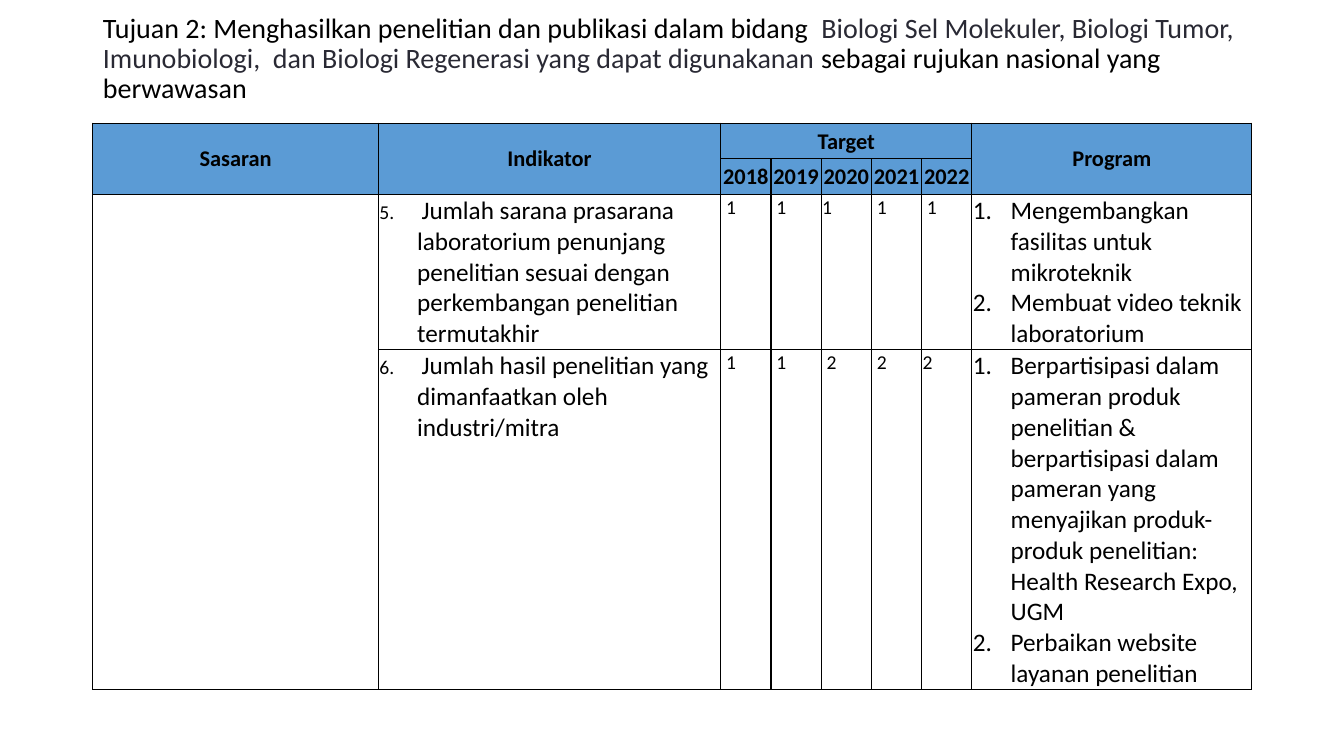
from lxml.etree import SubElement as Sub
from pptx import Presentation
from pptx.dml.color import RGBColor as Rgb
from pptx.enum.text import MSO_ANCHOR as Anchor, MSO_AUTO_SIZE as Fit, PP_ALIGN as Align
from pptx.oxml.ns import qn
from pptx.util import Pt

HUES = {"ink": "000000", "dark": "292934", "head": "5B9BD5"}
FONT = "Calibri"
TITLE = [
    ("Tujuan 2: Menghasilkan penelitian dan publikasi dalam bidang  ", "ink"),
    ("Biologi Sel Molekuler, Biologi Tumor, Imunobiologi,  dan Biologi Regenerasi "
     "yang dapat digunakanan ", "dark"),
    ("sebagai rujukan nasional yang berwawasan ", "ink"),
]
YEARS = range(2018, 2023)
WIDTHS = [204, 244.5] + [35.9] * len(YEARS) + [200]
HEIGHTS = [25.5, 25.5, 111, 242]
LAST = len(WIDTHS) - 1
GOALS = [
    (5, "Jumlah sarana prasarana laboratorium penunjang penelitian sesuai dengan "
        "perkembangan penelitian termutakhir",
     [" 1", " 1", "1 ", " 1", " 1"],
     ["Mengembangkan fasilitas untuk mikroteknik", "Membuat video teknik laboratorium"]),
    (6, "Jumlah hasil penelitian yang dimanfaatkan oleh industri/mitra",
     [" 1", " 1", " 2", " 2", "2 "],
     ["Berpartisipasi dalam pameran produk penelitian & berpartisipasi dalam pameran "
      "yang menyajikan produk-produk penelitian: Health Research Expo, UGM",
      "Perbaikan website layanan penelitian"]),
]


def add_run(para, text, size, hue="ink", bold=False):
    run = para.add_run()
    run.text = text
    font = run.font
    font.name, font.size, font.bold = FONT, Pt(size), bold
    font.color.rgb = Rgb.from_string(HUES[hue])


def add_title(slide):
    title = slide.shapes.title
    title.left, title.top, title.width, title.height = Pt(66.3), Pt(28.8), Pt(828), Pt(51)
    frame = title.text_frame
    frame.auto_size, frame.word_wrap = Fit.NONE, True
    frame.vertical_anchor = Anchor.MIDDLE
    para = frame.paragraphs[0]
    para.alignment, para.line_spacing = Align.LEFT, 0.9
    for text, hue in TITLE:
        add_run(para, text, 20, hue)
    para.add_line_break()
    Sub(para._p[-1], qn("a:rPr"), sz="2000")
    Sub(para._p, qn("a:endParaRPr"), sz="2000")


def set_cell(cell, head):
    """Give a cell its margins, black borders and fill."""
    cell.margin_left = cell.margin_right = cell.margin_top = Pt(0.7)
    cell.margin_bottom = Pt(0)
    props = cell._tc.get_or_add_tcPr()
    for side in ("lnL", "lnR", "lnT", "lnB"):
        line = Sub(props, qn(f"a:{side}"), w=str(Pt(1)))
        Sub(Sub(line, qn("a:solidFill")), qn("a:srgbClr"), val=HUES["ink"])
    if head:
        cell.vertical_anchor = Anchor.MIDDLE
        cell.fill.solid()
        cell.fill.fore_color.rgb = Rgb.from_string(HUES["head"])
    else:
        cell.fill.background()


def set_head(cell, text):
    para = cell.text_frame.paragraphs[0]
    para.alignment = Align.CENTER
    add_run(para, text, 16, bold=True)


def set_number(para, start=1):
    """Number a paragraph with a hanging indent."""
    props = para._p.get_or_add_pPr()
    props.set("marL", str(Pt(27)))
    props.set("indent", str(Pt(-27)))
    auto = Sub(props, qn("a:buAutoNum"), type="arabicPeriod")
    if start > 1:
        auto.set("startAt", str(start))


def set_goal(table, row, goal):
    start, text, marks, plans = goal
    para = table.cell(row, 1).text_frame.paragraphs[0]
    set_number(para, start)
    add_run(para, " ", 14)
    add_run(para, text, 18)
    add_run(para, " ", 14)
    for col, mark in enumerate(marks, 2):
        add_run(table.cell(row, col).text_frame.paragraphs[0], mark, 14)
    frame = table.cell(row, LAST).text_frame
    for i, plan in enumerate(plans):
        para = frame.add_paragraph() if i else frame.paragraphs[0]
        set_number(para)
        add_run(para, plan, 18)


def add_grid(slide):
    table = slide.shapes.add_table(len(HEIGHTS), len(WIDTHS), Pt(66.3), Pt(88),
                                   Pt(sum(WIDTHS)), Pt(sum(HEIGHTS))).table
    table.first_row = table.horz_banding = False
    for col, width in zip(table.columns, WIDTHS):
        col.width = Pt(width)
    for i, (row, height) in enumerate(zip(table.rows, HEIGHTS)):
        row.height = Pt(height)
        for cell in row.cells:
            set_cell(cell, i < 2)
    for top, left, end, right in [(0, 0, 1, 0), (0, 1, 1, 1), (0, 2, 0, LAST - 1),
                                  (0, LAST, 1, LAST), (2, 0, 3, 0)]:
        table.cell(top, left).merge(table.cell(end, right))
    for col, text in [(0, "Sasaran"), (1, "Indikator"), (2, "Target"), (LAST, "Program")]:
        set_head(table.cell(0, col), text)
    for col, year in enumerate(YEARS, 2):
        set_head(table.cell(1, col), str(year))
    for row, goal in enumerate(GOALS, 2):
        set_goal(table, row, goal)


def main():
    deck = Presentation()
    deck.slide_width, deck.slide_height = Pt(960), Pt(540)
    slide = deck.slides.add_slide(deck.slide_layouts[5])
    add_title(slide)
    add_grid(slide)
    deck.save("out.pptx")


if __name__ == "__main__":
    main()
